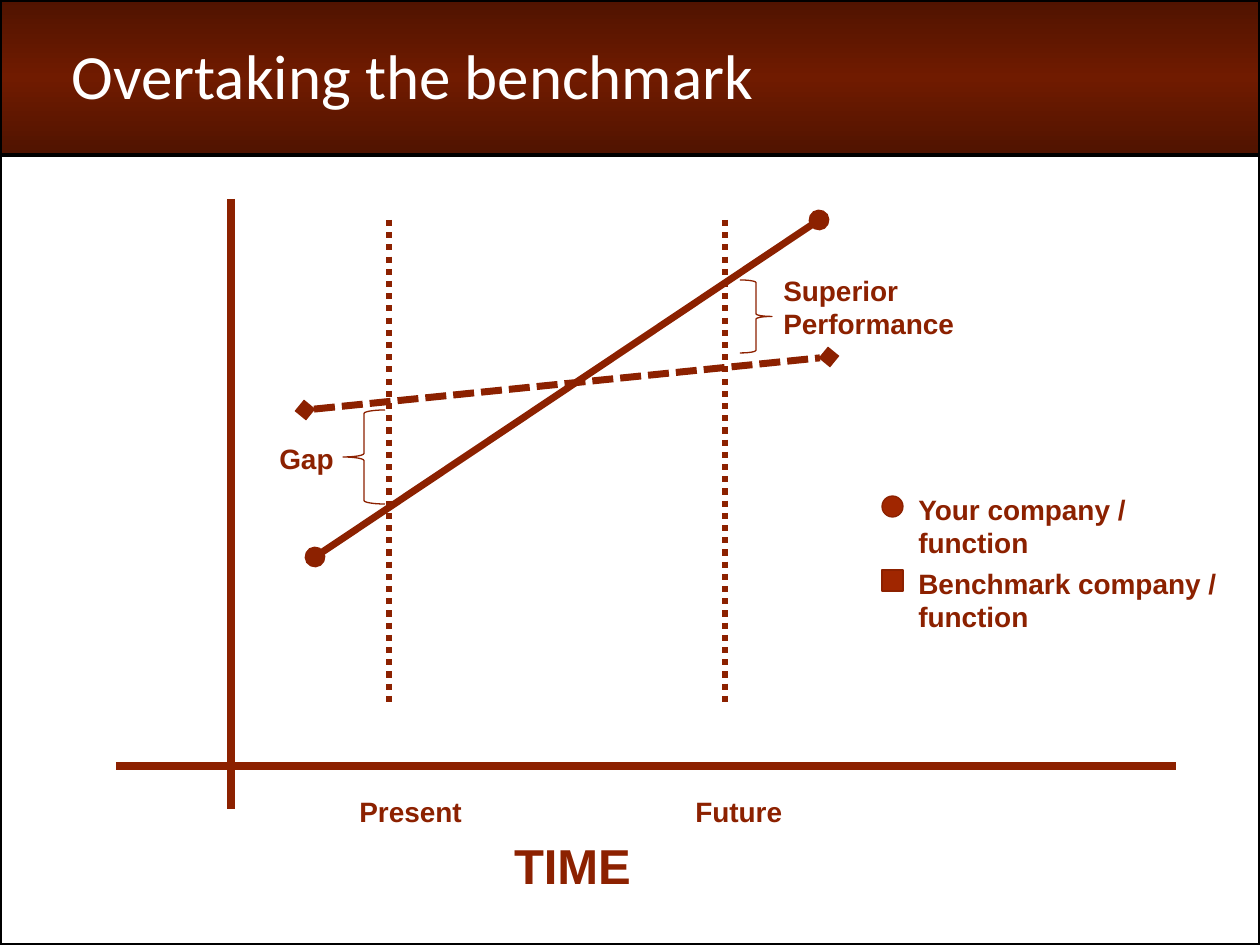
import copy

import pptx
import pptx.dml.color
import pptx.enum.dml
import pptx.enum.shapes
import pptx.enum.text
import pptx.oxml
import pptx.oxml.ns
import pptx.util

SCALE = pptx.util.Inches(1) / 126
SLIDE_WIDTH, SLIDE_HEIGHT = 1260, 945
RUST, MARKER_RED, BLACK, WHITE = "8C2100", "A02600", "000000", "FFFFFF"
BAND_STOPS = [(0, "501300"), (0.5, "701B00"), (1, "501300")]
SHAPES = pptx.enum.shapes.MSO_SHAPE
DASHES = pptx.enum.dml.MSO_LINE


def px(length):
    return pptx.util.Emu(round(length * SCALE))


def color(hex_string):
    return pptx.dml.color.RGBColor.from_string(hex_string)


def add_text(slide, text, left, top, width, height, size=16, font="Arial",
             fill=RUST, bold=True, align="LEFT", anchor="TOP",
             margins=(0.1, 0.05), line_spacing=None):
    box = slide.shapes.add_textbox(px(left), px(top), px(width), px(height))
    frame = box.text_frame
    frame.word_wrap = True
    frame.vertical_anchor = getattr(pptx.enum.text.MSO_ANCHOR, anchor)
    frame.margin_left = frame.margin_right = pptx.util.Inches(margins[0])
    frame.margin_top = frame.margin_bottom = pptx.util.Inches(margins[1])
    paragraph = frame.paragraphs[0]
    paragraph.alignment = getattr(pptx.enum.text.PP_ALIGN, align)
    if line_spacing:
        paragraph.line_spacing = line_spacing
    run = paragraph.add_run()
    run.text = text
    run.font.name = font
    run.font.size = pptx.util.Pt(size)
    run.font.bold = bold
    run.font.color.rgb = color(fill)


def add_shape(slide, kind, left, top, width, height, fill=None,
              line=RUST, weight=0.75):
    shape = slide.shapes.add_shape(kind, px(left), px(top), px(width), px(height))
    shape.shadow.inherit = False
    if fill:
        shape.fill.solid()
        shape.fill.fore_color.rgb = color(fill)
    else:
        shape.fill.background()
    shape.line.color.rgb = color(line)
    shape.line.width = pptx.util.Pt(weight)
    return shape


def add_line(slide, start, end, weight, dash=None, ends=None):
    """Draw a line between two points, with the same arrowhead at both ends."""
    connector = slide.shapes.add_connector(
        pptx.enum.shapes.MSO_CONNECTOR.STRAIGHT, *map(px, start + end))
    connector.line.color.rgb = color(RUST)
    connector.line.width = pptx.util.Pt(weight)
    if dash:
        connector.line.dash_style = dash
    properties = connector._element.spPr
    if ends:
        outline = properties.find(pptx.oxml.ns.qn("a:ln"))
        for tag in ("headEnd", "tailEnd"):
            outline.append(pptx.oxml.parse_xml(
                f'<a:{tag} {pptx.oxml.ns.nsdecls("a")} type="{ends}"/>'))
    properties.append(pptx.oxml.parse_xml(
        f'<a:effectLst {pptx.oxml.ns.nsdecls("a")}/>'))


def add_header(slide, left, top, width, height):
    band = add_shape(slide, SHAPES.RECTANGLE, left, top, width, height,
                     line=BLACK, weight=2.25)
    band.fill.gradient()
    band.fill.gradient_angle = 90
    stop_list = band._element.spPr.find(".//" + pptx.oxml.ns.qn("a:gsLst"))
    stop_list.insert(1, copy.deepcopy(stop_list[0]))
    for stop, (position, shade) in zip(band.fill.gradient_stops, BAND_STOPS):
        stop.position = position
        stop.color.rgb = color(shade)
    add_text(slide, "Overtaking the benchmark", left + 63, top + 21, 1113, 116,
             size=36, font="Calibri", fill=WHITE, bold=False, anchor="MIDDLE",
             margins=(0.07, 0.03), line_spacing=0.9)


def add_diagram(slide, left, top, width, height):
    """Draw the axes, the two trends and the gaps between them."""
    def at(x, y):
        return left + x, top + y

    axis_x, axis_y = 115, 567
    add_line(slide, at(axis_x, 0), at(axis_x, height), 4.75)
    add_line(slide, at(0, axis_y), at(width, axis_y), 4.75)
    for moment, x in (("Present", 273), ("Future", 609)):
        add_line(slide, at(x, 21), at(x, 504), 3.5, DASHES.ROUND_DOT)
        add_text(slide, moment, *at(x - 42, 589), 199, 47)
    add_line(slide, at(199, 358), at(703, 21), 4, ends="oval")
    add_line(slide, at(189, 211), at(713, 158), 4, DASHES.SQUARE_DOT, "diamond")

    for kind, box in ((SHAPES.RIGHT_BRACE, (*at(624, 81), 32, 73)),
                      (SHAPES.LEFT_BRACE, (*at(227, 211), 42, 94))):
        add_shape(slide, kind, *box)
    add_text(slide, "Gap", *at(151, 236), 116, 47)
    add_text(slide, "Superior Performance", *at(655, 68), 262, 81)
    add_text(slide, "TIME", *at(357, 630), 199, 72, size=28, align="CENTER")


def add_legend(slide, left, top, width):
    entries = ((SHAPES.OVAL, "Your company / function"),
               (SHAPES.RECTANGLE, "Benchmark company / function"))
    for index, (marker, label) in enumerate(entries):
        y = top + index * 74
        add_shape(slide, marker, left, y + 10, 21, 21, fill=MARKER_RED)
        add_text(slide, label, left + 24, y, width - 24, 81)


def main():
    presentation = pptx.Presentation()
    presentation.slide_width = px(SLIDE_WIDTH)
    presentation.slide_height = px(SLIDE_HEIGHT)
    slide = presentation.slides.add_slide(presentation.slide_layouts[6])
    add_shape(slide, SHAPES.RECTANGLE, 0, 0, SLIDE_WIDTH, SLIDE_HEIGHT,
              line=BLACK, weight=2.25)
    add_header(slide, 0, 0, SLIDE_WIDTH, 155)
    add_diagram(slide, 116, 199, 1060, 610)
    add_legend(slide, 882, 486, 349)
    presentation.save("out.pptx")


if __name__ == "__main__":
    main()
